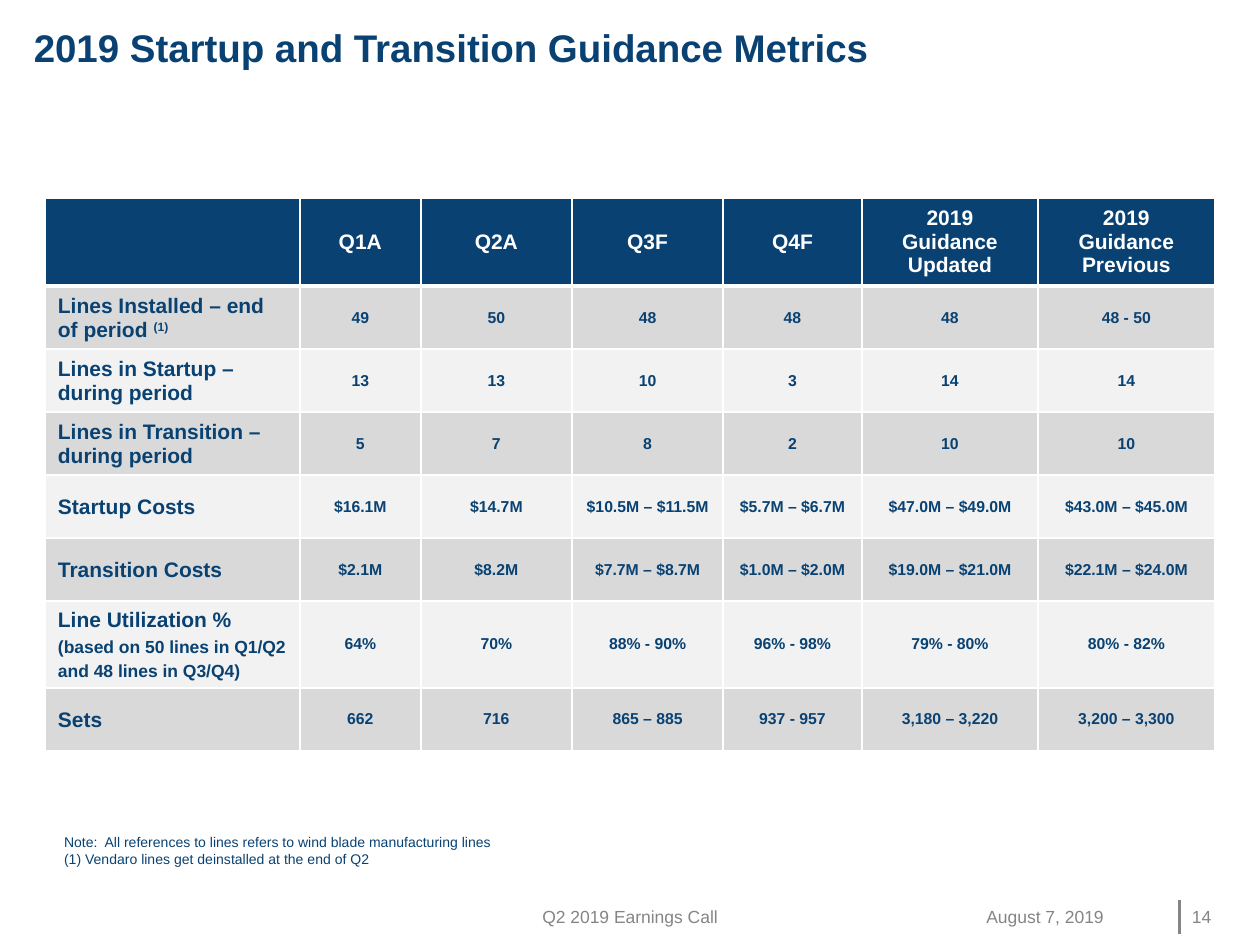
from lxml import etree
from pptx import Presentation
from pptx.dml.color import RGBColor
from pptx.enum.shapes import MSO_CONNECTOR
from pptx.enum.text import MSO_ANCHOR, PP_ALIGN
from pptx.oxml.ns import qn
from pptx.util import Inches, Pt

NAVY = RGBColor(0x09, 0x42, 0x72)
GRAY = RGBColor(0x84, 0x85, 0x87)
WHITE = RGBColor(0xFF, 0xFF, 0xFF)
DARK_BAND = RGBColor(0xD9, 0xD9, 0xD9)
LIGHT_BAND = RGBColor(0xF2, 0xF2, 0xF2)
STRAIGHT = MSO_CONNECTOR.STRAIGHT
TOP, MIDDLE = MSO_ANCHOR.TOP, MSO_ANCHOR.MIDDLE
LEFT, CENTER = PP_ALIGN.LEFT, PP_ALIGN.CENTER
FONT = "Arial"

COLUMN_WIDTHS = [2.02, 0.96, 1.2, 1.2, 1.1, 1.4, 1.4]
ROW_HEIGHTS = [0.65, 0.5, 0.5, 0.5, 0.5, 0.5, 0.69, 0.5]
HEADERS = ["", "Q1A", "Q2A", "Q3F", "Q4F",
           "2019\nGuidance\nUpdated", "2019\nGuidance\nPrevious"]
METRICS = [
    ["Lines Installed – end of period ", "49", "50", "48", "48", "48", "48 - 50"],
    ["Lines in Startup – during period", "13", "13", "10", "3", "14", "14"],
    ["Lines in Transition – during period", "5", "7", "8", "2", "10", "10"],
    ["Startup Costs", "$16.1M", "$14.7M", "$10.5M – $11.5M", "$5.7M – $6.7M",
     "$47.0M – $49.0M", "$43.0M – $45.0M"],
    ["Transition Costs", "$2.1M", "$8.2M", "$7.7M – $8.7M", "$1.0M – $2.0M",
     "$19.0M – $21.0M", "$22.1M – $24.0M"],
    ["Line Utilization %", "64%", "70%", "88% - 90%", "96% - 98%",
     "79% - 80%", "80% - 82%"],
    ["Sets", "662", "716", "865 – 885", "937 - 957",
     "3,180 – 3,220", "3,200 – 3,300"],
]
FOOTNOTE_ROW, UTILIZATION_ROW = 1, 6


def add_run(paragraph, text, size, color, bold=False):
    """Add one formatted run to a paragraph."""
    run = paragraph.add_run()
    run.text = text
    run.font.name = FONT
    run.font.size = Pt(size)
    run.font.bold = bold
    run.font.color.rgb = color
    return run


def fill_text(frame, text, size, color, bold=False, alignment=LEFT):
    """Write each line of the text as its own paragraph."""
    for index, line in enumerate(text.split("\n")):
        paragraph = frame.add_paragraph() if index else frame.paragraphs[0]
        paragraph.alignment = alignment
        if line:
            add_run(paragraph, line, size, color, bold)


def add_text(slide, box, text, size, color, bold=False, alignment=LEFT,
             anchor=MIDDLE, wrap=True, inset=True):
    """Place a text box in the given box of inches."""
    frame = slide.shapes.add_textbox(*map(Inches, box)).text_frame
    frame.word_wrap = wrap
    frame.vertical_anchor = anchor
    if not inset:
        frame.margin_left = frame.margin_right = 0
        frame.margin_top = frame.margin_bottom = 0
    fill_text(frame, text, size, color, bold, alignment)


def style_cell(cell, fill, top_width=1, bottom_width=1):
    """Give a cell its white borders, fill and anchor."""
    properties = cell._tc.get_or_add_tcPr()
    for side, width in zip("LRTB", (1, 1, top_width, bottom_width)):
        border = etree.SubElement(properties, qn(f"a:ln{side}"), w=str(Pt(width)))
        solid = etree.SubElement(border, qn("a:solidFill"))
        etree.SubElement(solid, qn("a:srgbClr"), val=str(WHITE))
    cell.fill.solid()
    cell.fill.fore_color.rgb = fill
    cell.vertical_anchor = MIDDLE


def fill_label(cell, label, row):
    """Write a metric name with its footnote mark or remark."""
    paragraph = cell.text_frame.paragraphs[0]
    paragraph.line_spacing = Pt(14)
    add_run(paragraph, label, 12, NAVY, True)
    if row == FOOTNOTE_ROW:
        mark = add_run(paragraph, "(1)", 12, NAVY, True)
        mark.font._element.set("baseline", "30000")
    elif row == UTILIZATION_ROW:
        paragraph.add_line_break()
        add_run(paragraph, "(based on 50 lines in Q1/Q2 and 48 lines in Q3/Q4)",
                10, NAVY, True)


def add_metrics_table(slide, box):
    """Build the guidance table in the given box of inches."""
    table = slide.shapes.add_table(
        len(ROW_HEIGHTS), len(COLUMN_WIDTHS), *map(Inches, box)).table
    for column, width in zip(table.columns, COLUMN_WIDTHS):
        column.width = Inches(width)
    for row, height in zip(table.rows, ROW_HEIGHTS):
        row.height = Inches(height)
    for index, header in enumerate(HEADERS):
        cell = table.cell(0, index)
        style_cell(cell, NAVY, bottom_width=3)
        fill_text(cell.text_frame, header, 12, WHITE, True, CENTER)
    for row, values in enumerate(METRICS, 1):
        band = DARK_BAND if row % 2 else LIGHT_BAND
        for index, value in enumerate(values):
            cell = table.cell(row, index)
            style_cell(cell, band, top_width=3 if row == 1 else 1)
            if index:
                fill_text(cell.text_frame, value, 9, NAVY, True, CENTER)
            else:
                fill_label(cell, value, row)


def add_footer(slide, box):
    """Place call name, date, divider and page number in the footer box."""
    left, top, width, height = box
    right = left + width
    add_text(slide, (4.2, top, 1.6, height), "Q2 2019 Earnings Call", 10, GRAY,
             alignment=CENTER, wrap=False)
    add_text(slide, (right - 2.06, top, 1.55, height), "August 7, 2019", 10, GRAY)
    add_text(slide, (right - 0.33, top, 0.33, height), "14", 10, GRAY, inset=False)
    divider_x = Inches(right - 0.43)
    divider = slide.shapes.add_connector(
        STRAIGHT, divider_x, Inches(top), divider_x, Inches(top + height))
    divider.line.color.rgb = GRAY
    divider.line.width = Pt(2)
    etree.SubElement(divider._element.spPr, qn("a:effectLst"))


def main():
    """Build and save the guidance metrics slide."""
    presentation = Presentation()
    presentation.slide_width = Inches(10)
    presentation.slide_height = Inches(7.5)
    slide = presentation.slides.add_slide(presentation.slide_layouts[6])
    add_text(slide, (0.17, 0.14, 9.63, 0.79),
             "2019 Startup and Transition Guidance Metrics", 22, NAVY, True, anchor=TOP)
    add_metrics_table(slide, (0.36, 1.57, sum(COLUMN_WIDTHS), sum(ROW_HEIGHTS)))
    add_text(slide, (0.41, 6.57, 3.65, 0.37),
             "Note:  All references to lines refers to wind blade manufacturing lines\n"
             "(1) Vendaro lines get deinstalled at the end of Q2",
             8, NAVY, anchor=TOP, wrap=False)
    add_footer(slide, (0.17, 7.14, 9.62, 0.27))
    presentation.save("out.pptx")


if __name__ == "__main__":
    main()
